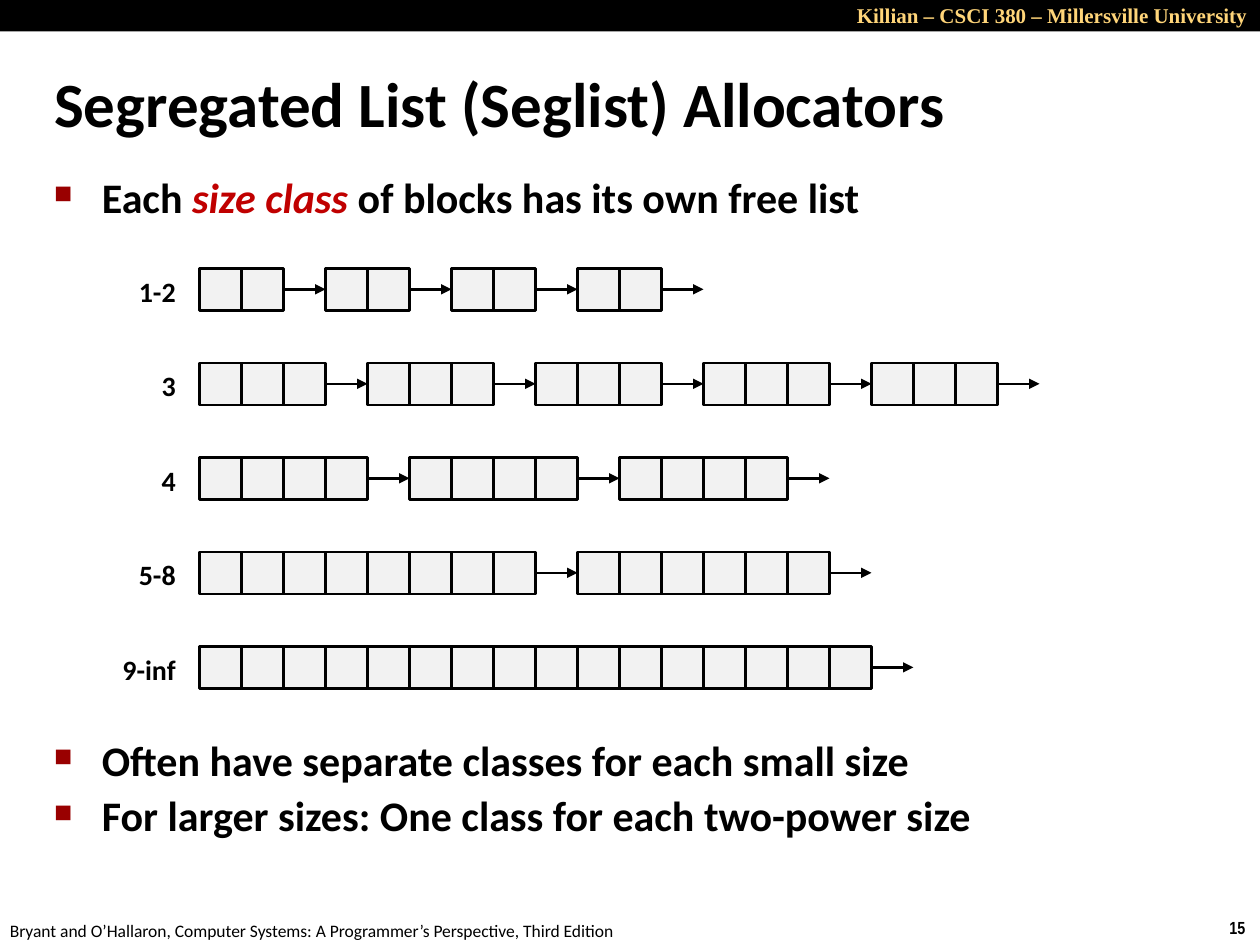
from lxml.etree import SubElement
from pptx import Presentation
from pptx.dml.color import RGBColor
from pptx.enum.shapes import MSO_CONNECTOR, MSO_SHAPE
from pptx.enum.text import MSO_ANCHOR as Anchor, MSO_AUTO_SIZE as AutoSize, PP_ALIGN as Align
from pptx.oxml.ns import qn
from pptx.util import Inches, Pt

COLORS = {
    "black": "000000",
    "header": "FFD579",
    "bullet": "990000",
    "emphasis": "C00000",
    "cell": "F2F2F2",
}
CELL = 1 / 3          # side of one block cell, also the length of an arrow
ROW_PITCH = 0.75      # distance between two size classes

# Label, label width, cells in each free block
SIZE_CLASSES = [
    ("1-2", 0.5, [2, 2, 2, 2]),
    ("3", 0.32, [3, 3, 3, 3, 3]),
    ("4", 0.32, [4, 4, 4]),
    ("5-8", 0.5, [8, 6]),
    ("9-inf", 0.63, [16]),
]


def color(name):
    return RGBColor.from_string(COLORS[name])


def add_run(paragraph, text, size, font="Calibri", fill="black", bold=True, italic=False):
    run = paragraph.add_run()
    run.text = text
    run.font.name = font
    run.font.size = Pt(size)
    run.font.bold = bold
    run.font.italic = italic
    run.font.color.rgb = color(fill)


def add_text_box(slide, box, wrap=False, align=Align.LEFT):
    frame = slide.shapes.add_textbox(*map(Inches, box)).text_frame
    frame.word_wrap = wrap
    frame.paragraphs[0].alignment = align
    return frame


def set_indent(paragraph, indent):
    properties = paragraph._p.get_or_add_pPr()
    properties.set("marL", str(Inches(indent)))
    properties.set("indent", str(-Inches(indent)))
    return properties


def add_rectangle(slide, box, fill):
    shape = slide.shapes.add_shape(MSO_SHAPE.RECTANGLE, *map(Inches, box))
    shape.shadow.inherit = False
    shape.fill.solid()
    shape.fill.fore_color.rgb = color(fill)
    return shape


def add_header(slide, width, height):
    add_rectangle(slide, (0, 0, width, height), "black").line.fill.background()
    box = (0.55 * width, -0.03, 0.45 * width, 0.3)
    frame = add_text_box(slide, box, wrap=True, align=Align.RIGHT)
    add_run(frame.paragraphs[0], "Killian – CSCI 380 – Millersville University",
            12, "Times New Roman", "header")


def add_footer(slide, width, top):
    number = add_text_box(slide, (width - 0.34, top - 0.02, 0.34, 0.27))
    add_run(number.paragraphs[0], "15", 10, "Arial Narrow")
    source = add_text_box(slide, (-0.02, top, 5.08, 0.27))
    add_run(source.paragraphs[0],
            "Bryant and O’Hallaron, Computer Systems: A Programmer’s Perspective, Third Edition",
            10, bold=False)


def set_title(slide, box, text):
    title = slide.shapes.title
    title.left, title.top, title.width, title.height = map(Inches, box)
    frame = title.text_frame
    frame.auto_size = AutoSize.NONE
    frame.vertical_anchor = Anchor.MIDDLE
    paragraph = frame.paragraphs[0]
    paragraph.alignment = Align.LEFT
    paragraph.line_spacing = 0.87
    set_indent(paragraph, 0.13)
    add_run(paragraph, text, 36)


def add_bullets(slide, box, items):
    """Each item is a list of (text, is_emphasized) pieces."""
    frame = add_text_box(slide, box, wrap=True)
    for index, pieces in enumerate(items):
        paragraph = frame.add_paragraph() if index else frame.paragraphs[0]
        paragraph.line_spacing = 0.95
        paragraph.space_before = Pt(4.2 if index else 0)
        properties = set_indent(paragraph, 0.38)
        bullet_color = SubElement(properties, qn("a:buClr"))
        SubElement(bullet_color, qn("a:srgbClr"), val=COLORS["bullet"])
        SubElement(properties, qn("a:buSzPct"), val="60000")
        SubElement(properties, qn("a:buChar"), char="■")
        for text, emphasized in pieces:
            add_run(paragraph, text, 24, italic=emphasized,
                    fill="emphasis" if emphasized else "black")


def add_block(slide, left, top, count):
    """Draw one free block and return its last and first cells."""
    cells = []
    for column in range(count):
        cell = add_rectangle(slide, (left + column * CELL, top, CELL, CELL), "cell")
        cell.line.color.rgb = color("black")
        cell.line.width = Pt(1.5)
        cells.append(cell)
    return cells[0], cells[-1]


def add_arrow(slide, left, middle, source, target=None):
    ends = map(Inches, (left, middle, left + CELL, middle))
    arrow = slide.shapes.add_connector(MSO_CONNECTOR.STRAIGHT, *ends)
    arrow.begin_connect(source, 3)
    if target is not None:
        arrow.end_connect(target, 1)
    arrow.line.color.rgb = color("black")
    arrow.line.width = Pt(1.5)
    SubElement(arrow.line._get_or_add_ln(), qn("a:tailEnd"), type="triangle")
    SubElement(arrow._element.spPr, qn("a:effectLst"))


def add_free_list(slide, left, top, label, label_width, blocks):
    # Size class label, ending just before the first block
    frame = add_text_box(slide, (left - 0.09 - label_width, top, label_width, 0.37),
                         align=Align.RIGHT)
    add_run(frame.paragraphs[0], label, 16)

    # Blocks, one arrow apart
    ends = []
    x = left
    for count in blocks:
        ends.append((x + count * CELL, *add_block(slide, x, top, count)))
        x += (count + 1) * CELL

    # Arrows to the next block; the last one points to nothing
    targets = [first for _, first, _ in ends[1:]] + [None]
    for (right, _, last), target in zip(ends, targets):
        add_arrow(slide, right, top + CELL / 2, last, target)


def add_seglist(slide, left, top):
    for row, size_class in enumerate(SIZE_CLASSES):
        add_free_list(slide, left, top + row * ROW_PITCH, *size_class)


def main():
    width, height = 10, 7.5
    presentation = Presentation()
    presentation.slide_width = Inches(width)
    presentation.slide_height = Inches(height)
    slide = presentation.slides.add_slide(presentation.slide_layouts[5])

    add_header(slide, width, height / 30)
    add_footer(slide, width, height - 0.25)
    set_title(slide, (0.33, 0.54, 9, 0.63), "Segregated List (Seglist) Allocators")
    add_bullets(slide, (0.33, 1.34, 9.09, 0.5), [
        [("Each ", False), ("size class ", True), ("of blocks has its own free list", False)],
    ])
    add_seglist(slide, 4.75 * CELL, 2.13)
    add_bullets(slide, (0.33, 5.81, 9.09, 1), [
        [("Often have separate classes for each small size", False)],
        [("For larger sizes: One class for each two-power size", False)],
    ])
    presentation.save("out.pptx")


if __name__ == "__main__":
    main()
